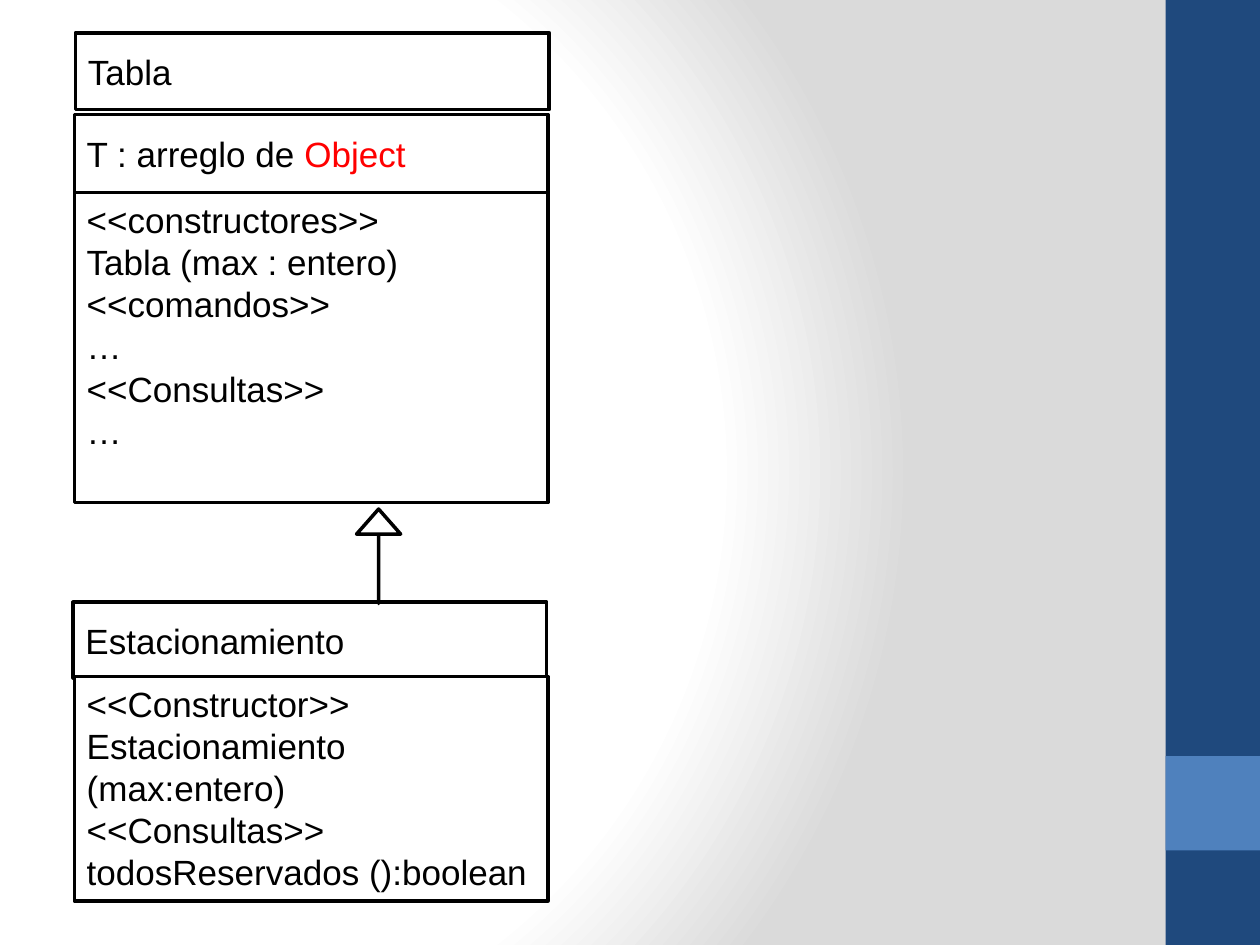
from pptx import Presentation
from pptx.dml.color import RGBColor
from pptx.enum import shapes, text
from pptx.oxml import parse_xml
from pptx.oxml.ns import nsdecls
from pptx import util as u

COLUMNS, ROWS = 100, 75


def color(value):
    return RGBColor.from_string(value)


class Diagram:
    """Style and current slide; lengths are columns and rows of the grid."""
    font, size, line_width = "Arial", 20, 2
    ink, paper, accent = "000000", "FFFFFF", "FF0000"
    navy, blue, gray = "1F497D", "4F81BD", "DADADA"

    def __init__(self, deck):
        self.page = deck.slides.add_slide(deck.slide_layouts[6])
        self.column = deck.slide_width / COLUMNS
        self.row = deck.slide_height / ROWS

    def background(self):
        """Radial gradient centred on the left part of the slide."""
        stops = "".join(
            f'<a:gs pos="{share * 1000}"><a:srgbClr val="{value}"/></a:gs>'
            for share, value in ((0, self.paper), (75, self.paper), (100, self.gray)))
        fill = parse_xml(
            f'<a:gradFill {nsdecls("a")} rotWithShape="1"><a:gsLst>{stops}</a:gsLst>'
            '<a:path path="circle">'
            '<a:fillToRect l="20000" t="50000" r="100000" b="50000"/>'
            '</a:path></a:gradFill>')
        self.page.background.fill.gradient()
        properties = self.page.background._cSld.bg.bgPr
        properties.replace(properties[0], fill)

    def shape(self, kind, left, top, width, height, fill, line=None):
        item = self.page.shapes.add_shape(
            kind, round(left * self.column), round(top * self.row),
            round(width * self.column), round(height * self.row))
        item.shadow.inherit = False
        item.fill.solid()
        item.fill.fore_color.rgb = color(fill)
        if line:
            item.line.color.rgb = color(line)
            item.line.width = u.Pt(self.line_width)
        else:
            item.line.fill.background()
        return item

    def band(self, top, height, fill):
        self.shape(shapes.MSO_SHAPE.RECTANGLE, 92.5, top, 7.5, height, fill)

    def compartment(self, left, top, height, lines, heading=False):
        """One UML class section; each line is a list of (words, colour)."""
        box = self.shape(shapes.MSO_SHAPE.RECTANGLE, left, top, 37.6, height,
                         self.paper, self.ink)
        frame = box.text_frame
        frame.word_wrap = not heading
        frame.vertical_anchor = (text.MSO_ANCHOR.MIDDLE if heading
                                 else text.MSO_ANCHOR.TOP)
        for index, line in enumerate(lines):
            para = frame.add_paragraph() if index else frame.paragraphs[0]
            para.alignment = text.PP_ALIGN.LEFT
            for words, ink in line:
                span = para.add_run()
                span.text = words
                span.font.name = self.font
                span.font.size = u.Pt(self.size)
                span.font.color.rgb = color(ink)

    def plain(self, *lines):
        return [[(line, self.ink)] for line in lines]

    def inheritance(self, left, top, length, width):
        """Upward arrow with a hollow head and a shaft of no thickness."""
        arrow = self.shape(shapes.MSO_SHAPE.RIGHT_ARROW, left, top, length, width,
                           self.paper, self.ink)
        arrow.rotation = 270
        arrow.adjustments[0] = 0
        arrow.adjustments[1] = 0.567


def main():
    deck = Presentation()
    deck.slide_width, deck.slide_height = u.Inches(10), u.Inches(7.5)
    diagram = Diagram(deck)

    # Background and side bands
    diagram.background()
    diagram.band(0, ROWS, diagram.navy)
    diagram.band(60, 7.5, diagram.blue)

    # Subclass
    diagram.compartment(5.8, 47.8, 6, diagram.plain("Estacionamiento"), heading=True)
    diagram.compartment(5.9, 53.7, 17.8, diagram.plain(
        "<<Constructor>>", "Estacionamiento (max:entero)",
        "<<Consultas>>", "todosReservados ():boolean"))

    # Base class, with the inheritance arrow pointing at it
    diagram.compartment(5.9, 15.3, 24.6, diagram.plain(
        "<<constructores>>", "Tabla (max : entero)", "<<comandos>>", "…",
        "<<Consultas>>", "…"))
    diagram.inheritance(26.3, 42.4, 7.5, 3.5)
    diagram.compartment(5.9, 9.1, 6.2, [[("T : arreglo de ", diagram.ink),
                                         ("Object", diagram.accent)]], heading=True)
    diagram.compartment(6, 2.6, 6.1, diagram.plain("Tabla"), heading=True)

    deck.save("out.pptx")


if __name__ == "__main__":
    main()
